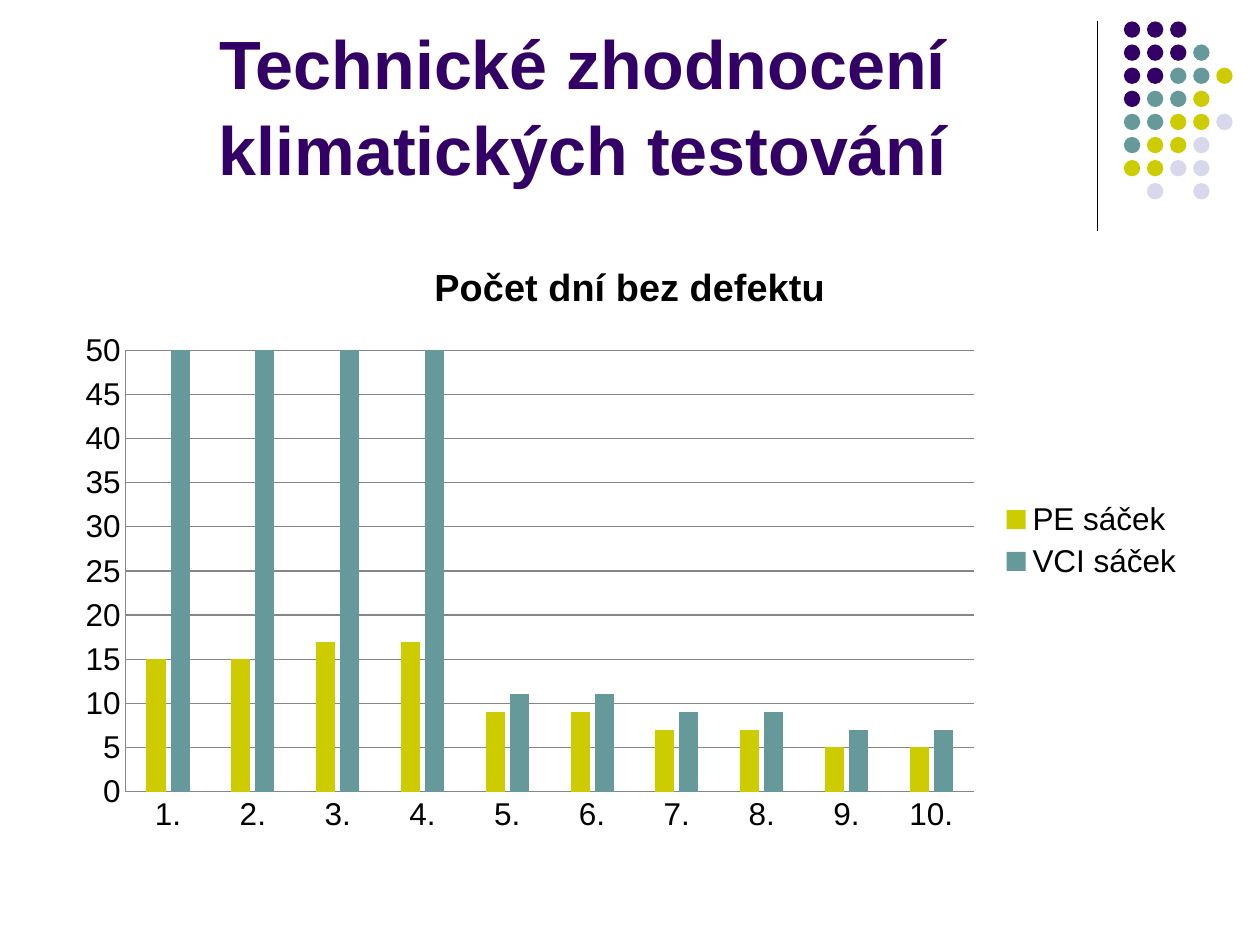
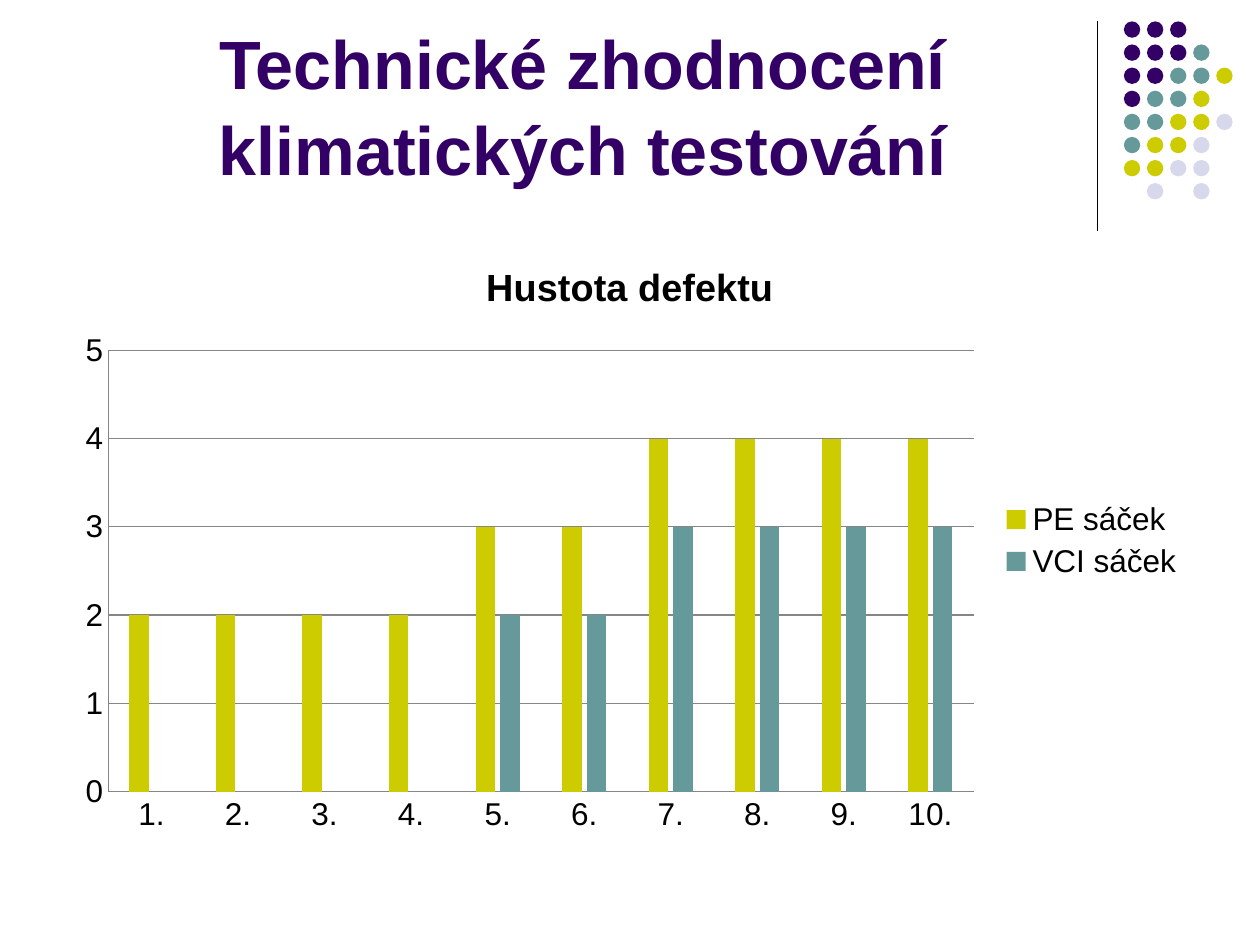
import dataclasses

import lxml.etree
import pptx
import pptx.chart.data
import pptx.dml.color
import pptx.enum.chart
import pptx.enum.shapes
import pptx.enum.text
import pptx.oxml.ns
import pptx.util

Inches = pptx.util.Inches
Pt = pptx.util.Pt


@dataclasses.dataclass(frozen=True)
class Theme:
    font: str = "Arial"
    purple: str = "330066"
    teal: str = "669999"
    lime: str = "CCCC00"
    pale: str = "D8D8EC"
    black: str = "000000"
    grid: str = "868686"
    head: float = 39
    label: float = 18
    sub: float = 21.6


THEME = Theme()
HEAD = "Technické zhodnocení klimatických testování"
DOTS = ("PPP", "PPPT", "PPTTL", "PTTL", "TTLLG", "TLLG", "LLGG", " G G")
INKS = {"P": THEME.purple, "T": THEME.teal, "L": THEME.lime, "G": THEME.pale}
STEPS = [f"{n}." for n in range(1, 11)]
CHARTS = (
    ("Počet dní bez defektu", 50, 5,
     (15, 15, 17, 17, 9, 9, 7, 7, 5, 5),
     (50, 50, 50, 50, 11, 11, 9, 9, 7, 7)),
    ("Hustota defektu", 5, 1,
     (2, 2, 2, 2, 3, 3, 4, 4, 4, 4),
     (0, 0, 0, 0, 2, 2, 3, 3, 3, 3)),
)


def tint(code):
    return pptx.dml.color.RGBColor.from_string(code)


def style(font, size, color, bold=False):
    font.name = THEME.font
    font.size = Pt(size)
    font.bold = bold
    font.color.rgb = tint(color)


def rule(line, color):
    line.width = Pt(0.75)
    line.color.rgb = tint(color)


def add_bar(slide):
    """Draw the upright line beside the title."""
    bar = slide.shapes.add_connector(
        pptx.enum.shapes.MSO_CONNECTOR.STRAIGHT,
        Inches(8.71), Inches(0.17), Inches(8.71), Inches(1.83))
    rule(bar.line, THEME.black)
    lxml.etree.SubElement(bar.element.spPr, pptx.oxml.ns.qn("a:effectLst"))


def add_dots(slide):
    """Draw the corner grid of dots, one letter of DOTS per dot."""
    group = slide.shapes.add_group_shape()
    pitch, size = 0.55 / 3, Inches(0.13)
    for row, marks in enumerate(DOTS):
        for col, mark in enumerate(marks):
            if mark == " ":
                continue
            dot = group.shapes.add_shape(
                pptx.enum.shapes.MSO_SHAPE.OVAL,
                Inches(8.92 + col * pitch), Inches(0.17 + row * pitch),
                size, size)
            dot.shadow.inherit = False
            dot.fill.solid()
            dot.fill.fore_color.rgb = tint(INKS[mark])
            dot.line.fill.background()


def add_title(slide, text):
    box = slide.shapes.add_textbox(
        Inches(0.5), Inches(0.13), Inches(8.25), Inches(1.42))
    frame = box.text_frame
    frame.word_wrap = True
    frame.vertical_anchor = pptx.enum.text.MSO_ANCHOR.BOTTOM
    frame.text = text
    para = frame.paragraphs[0]
    para.alignment = pptx.enum.text.PP_ALIGN.CENTER
    para.line_spacing = 1.05
    style(para.runs[0].font, THEME.head, THEME.purple, bold=True)


def set_axes(chart, top, step):
    value = chart.value_axis
    value.minimum_scale = 0
    value.maximum_scale = top
    value.major_unit = step
    value.has_major_gridlines = True
    rule(value.major_gridlines.format.line, THEME.grid)
    for axis in (chart.category_axis, value):
        axis.major_tick_mark = pptx.enum.chart.XL_TICK_MARK.NONE
        axis.minor_tick_mark = pptx.enum.chart.XL_TICK_MARK.NONE
        rule(axis.format.line, THEME.grid)
        style(axis.tick_labels.font, THEME.label, THEME.black)


def add_chart(slide, title, top, step, pe_bag, vci_bag):
    data = pptx.chart.data.CategoryChartData()
    data.categories = STEPS
    data.add_series("PE sáček", pe_bag)
    data.add_series("VCI sáček", vci_bag)
    chart = slide.shapes.add_chart(
        pptx.enum.chart.XL_CHART_TYPE.COLUMN_CLUSTERED,
        Inches(0.5), Inches(1.88), Inches(9), Inches(4.82), data).chart
    style(chart.font, THEME.label, THEME.black)

    chart.has_title = True
    frame = chart.chart_title.text_frame
    frame.text = title
    style(frame.paragraphs[0].runs[0].font, THEME.sub, THEME.black, bold=True)
    chart.chart_title.include_in_layout = False

    chart.has_legend = True
    chart.legend.position = pptx.enum.chart.XL_LEGEND_POSITION.RIGHT
    chart.legend.include_in_layout = False
    style(chart.legend.font, THEME.label, THEME.black)

    set_axes(chart, top, step)
    plot = chart.plots[0]
    plot.vary_by_categories = False
    plot.gap_width = 219
    plot.overlap = -27
    for series, color in zip(plot.series, (THEME.lime, THEME.teal)):
        series.format.fill.solid()
        series.format.fill.fore_color.rgb = tint(color)


def main():
    deck = pptx.Presentation()
    deck.slide_width = Inches(10)
    deck.slide_height = Inches(7.5)
    for chart in CHARTS:
        slide = deck.slides.add_slide(deck.slide_layouts[6])
        add_bar(slide)
        add_dots(slide)
        add_title(slide, HEAD)
        add_chart(slide, *chart)
    deck.save("out.pptx")


if __name__ == "__main__":
    main()
